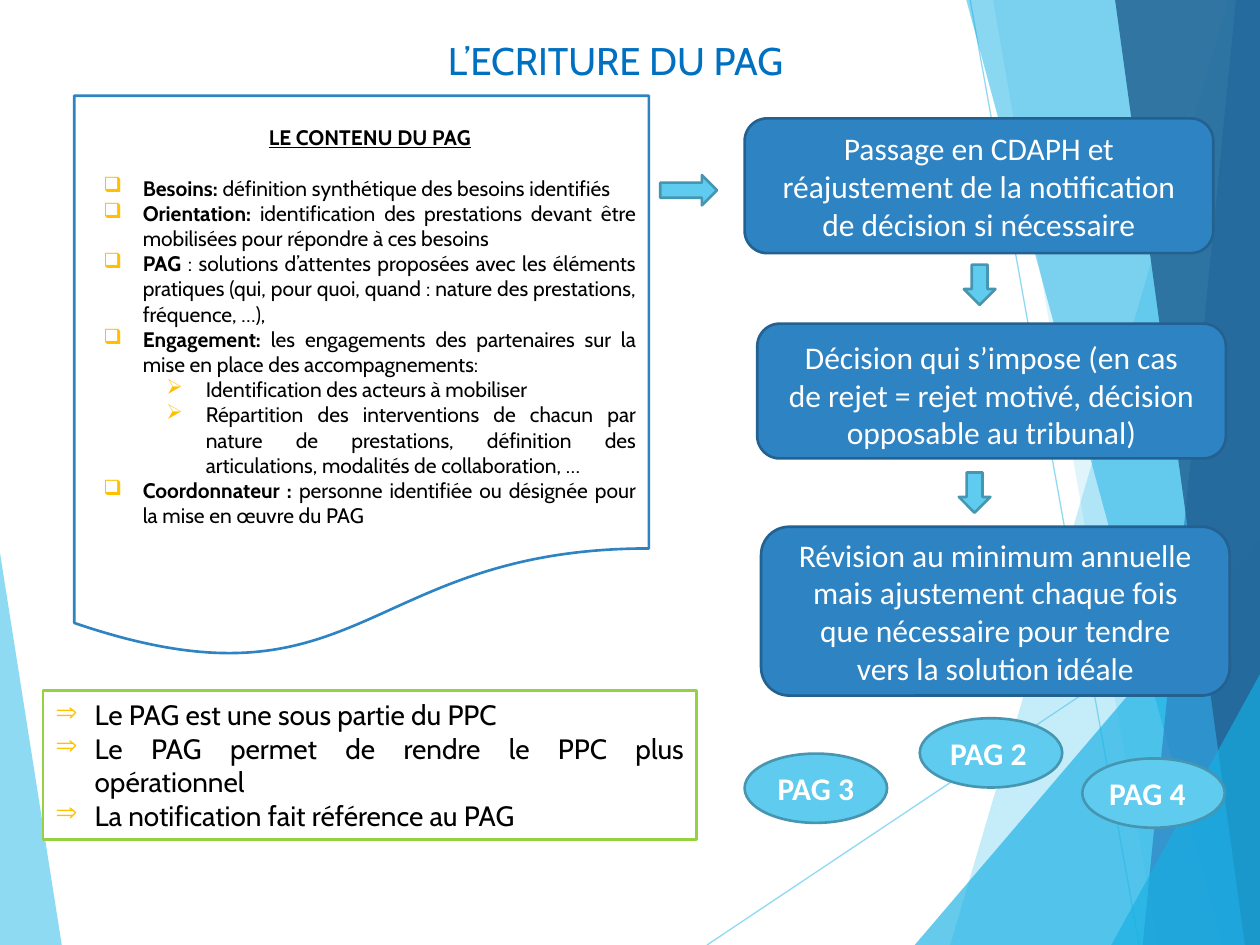
from lxml.etree import SubElement
from pptx import Presentation
from pptx.dml.color import RGBColor
from pptx.enum.shapes import MSO_CONNECTOR, MSO_SHAPE as Shape
from pptx.enum.text import MSO_ANCHOR as Anchor, PP_ALIGN as Align
from pptx.oxml.ns import qn
from pptx.util import Pt

WIDTH, HEIGHT = 720, 540
COLORS = {
    "sky": "5FCBEF", "cyan": "17B0E4", "blue": "2E83C3", "navy": "226292",
    "step_line": "226190", "sky_line": "4696B1", "green": "96D141",
    "title": "0070C0", "bullet": "FFC000", "white": "FFFFFF", "black": "000000",
}
# Colour, opacity, upper and lower end of the slanted edge, slide side it closes on
BANDS = [
    ("sky", 70, (0, 316), (35.3, 540), 0),
    ("sky", 36, (702, 0), (543, 540), WIDTH),
    ("sky", 20, (567.4, 0), (661.7, 540), WIDTH),
    ("cyan", 66, (720, 309), (522.7, 540), WIDTH),
    ("cyan", 50, (552.2, 0), (698.4, 540), WIDTH),
    ("blue", 70, (706.3, 0), (653, 540), WIDTH),
    ("navy", 82, (637.2, 0), (711.4, 540), WIDTH),
    ("cyan", 66, (720, 385.2), (635, 540), WIDTH),
]
RAYS = [((404, 540), (720, 329)), ((554.4, 0), (651, 540))]
# Bullet, left indent, bold lead, text
CONTENTS = [
    ("❑", 22.5, "Besoins: ", "définition synthétique des besoins identifiés"),
    ("❑", 22.5, "Orientation: ",
     "identification des prestations devant être mobilisées pour répondre à ces besoins"),
    ("❑", 22.5, "PAG ",
     ": solutions d’attentes proposées avec les éléments pratiques "
     "(qui, pour quoi, quand : nature des prestations, fréquence, …),"),
    ("❑", 22.5, "Engagement: ",
     "les engagements des partenaires sur la mise en place des accompagnements:"),
    ("➢", 58.5, "", "Identification des acteurs à mobiliser"),
    ("➢", 58.5, "",
     "Répartition des interventions de chacun par nature de prestations, "
     "définition des articulations, modalités de collaboration, …"),
    ("❑", 22.5, "Coordonnateur : ",
     "personne identifiée ou désignée pour la mise en œuvre du PAG"),
]
NOTES = [
    "Le PAG est une sous partie du PPC",
    "Le PAG permet de rendre le PPC plus opérationnel",
    "La notification fait référence au PAG",
]
# Left, top, height, extra top inset, text
STEPS = [
    (425.5, 67.7, 77, 0,
     "Passage en CDAPH et réajustement de la notification de décision si nécessaire"),
    (432.7, 185, 77, 4,
     "Décision qui s’impose (en cas de rejet = rejet motivé, décision opposable au tribunal)"),
    (434.9, 301, 96.5, 0,
     "Révision au minimum annuelle mais ajustement chaque fois que nécessaire "
     "pour tendre vers la solution idéale"),
]
ARROWS = [
    (Shape.RIGHT_ARROW, 377.3, 100.1, 32.4, 17.3),
    (Shape.DOWN_ARROW, 550.8, 151.2, 18, 23),
    (Shape.DOWN_ARROW, 547.9, 270, 18, 23),
]
# Left, top, extra right inset, label
PLANS = [(425.5, 430.6, 0, "PAG 3"), (525.6, 410.4, 3, "PAG 2"), (618.5, 433.4, 7, "PAG 4")]


def color(name):
    return RGBColor.from_string(COLORS[name])


def set_opacity(shape, percent):
    for value in shape.element.spPr.iter(qn("a:srgbClr")):
        SubElement(value, qn("a:alpha"), val=str(percent * 1000))


def add_band(page, fill, opacity, upper, lower, side):
    start, *others = [(Pt(x), Pt(y)) for x, y in
                      (upper, lower, (side, HEIGHT), (side, upper[1]))]
    builder = page.shapes.build_freeform(*start)
    builder.add_line_segments(others)
    band = builder.convert_to_shape()
    band.shadow.inherit = False
    band.fill.solid()
    band.fill.fore_color.rgb = color(fill)
    set_opacity(band, opacity)
    band.line.fill.background()


def add_ray(page, start, end):
    ends = [Pt(value) for value in start + end]
    ray = page.shapes.add_connector(MSO_CONNECTOR.STRAIGHT, *ends)
    ray.line.color.rgb = color("sky")
    ray.line.width = Pt(0.75)
    set_opacity(ray, 70)
    SubElement(ray.element.spPr, qn("a:effectLst"))


def add_box(page, kind, area, fill, line):
    box = page.shapes.add_shape(kind, *[Pt(value) for value in area])
    box.shadow.inherit = False
    box.fill.solid()
    box.fill.fore_color.rgb = color(fill)
    box.line.color.rgb = color(line)
    box.line.width = Pt(1.5)
    return box


def set_frame(box, left, top, right, bottom, anchor=Anchor.MIDDLE):
    frame = box.text_frame
    frame.word_wrap = True
    frame.margin_left, frame.margin_top = Pt(left), Pt(top)
    frame.margin_right, frame.margin_bottom = Pt(right), Pt(bottom)
    frame.vertical_anchor = anchor
    return frame


def add_span(para, text, size, ink, font="Cabin", bold=False):
    span = para.add_run()
    span.text = text
    span.font.name = font
    span.font.size = Pt(size)
    span.font.bold = bold
    span.font.color.rgb = color(ink)
    return span


def set_bullet(para, mark, indent):
    para.alignment = Align.JUSTIFY
    props = para._p.get_or_add_pPr()
    props.set("marL", str(Pt(indent)))
    props.set("indent", str(-Pt(22.5)))
    SubElement(SubElement(props, qn("a:buClr")), qn("a:srgbClr"), val=COLORS["bullet"])
    SubElement(props, qn("a:buChar"), char=mark)


def add_title(page):
    title = page.shapes.title
    title.left, title.top, title.width, title.height = Pt(49), Pt(25.2), Pt(605.5), Pt(30.2)
    para = set_frame(title, 0, 0, 0, 0, Anchor.TOP).paragraphs[0]
    para.alignment = Align.CENTER
    para.line_spacing = 0.85
    add_span(para, "L’ECRITURE DU PAG", 22, "title")
    title.element.getparent().append(title.element)  # in front of the bands


def add_contents(page):
    box = add_box(page, Shape.FLOWCHART_DOCUMENT, (42.5, 54.7, 328.3, 322.6), "white", "blue")
    frame = set_frame(box, 16.6, 16.6, 7.2, 0, Anchor.TOP)
    heading = frame.paragraphs[0]
    heading.alignment = Align.CENTER
    heading.space_after = Pt(14.4)
    add_span(heading, "LE CONTENU DU PAG", 12, "black", bold=True).font.underline = True
    for mark, indent, lead, text in CONTENTS:
        para = frame.add_paragraph()
        set_bullet(para, mark, indent)
        if lead:
            add_span(para, lead, 12, "black", bold=True)
        add_span(para, text, 12, "black")


def add_notes(page):
    box = add_box(page, Shape.RECTANGLE, (24.5, 394.6, 373.7, 85), "white", "green")
    frame = set_frame(box, 7.2, 3.6, 7.2, 3.6)
    for number, text in enumerate(NOTES):
        para = frame.add_paragraph() if number else frame.paragraphs[0]
        set_bullet(para, "⇒", 22.5)
        add_span(para, text, 16, "black")


def add_label(box, text, insets, bold=False):
    para = set_frame(box, *insets).paragraphs[0]
    para.alignment = Align.CENTER
    add_span(para, text, 18, "white", "Calibri", bold)


def main():
    deck = Presentation()
    deck.slide_width, deck.slide_height = Pt(WIDTH), Pt(HEIGHT)
    page = deck.slides.add_slide(deck.slide_layouts[5])
    first, *others = BANDS
    add_band(page, *first)
    for ray in RAYS:
        add_ray(page, *ray)
    for band in others:
        add_band(page, *band)
    add_contents(page)
    add_notes(page)
    add_title(page)
    for left, top, height, drop, text in STEPS:
        box = add_box(page, Shape.ROUNDED_RECTANGLE, (left, top, 267.8, height),
                      "blue", "step_line")
        add_label(box, text, (12.4, drop, 12.4, 0))
    for kind, *area in ARROWS:
        add_box(page, kind, area, "sky", "sky_line")
    for left, top, shift, text in PLANS:
        box = add_box(page, Shape.OVAL, (left, top, 81.4, 39.6), "sky", "sky_line")
        add_label(box, text, (0, 0, shift, 0), bold=True)
    deck.save("out.pptx")


if __name__ == "__main__":
    main()
